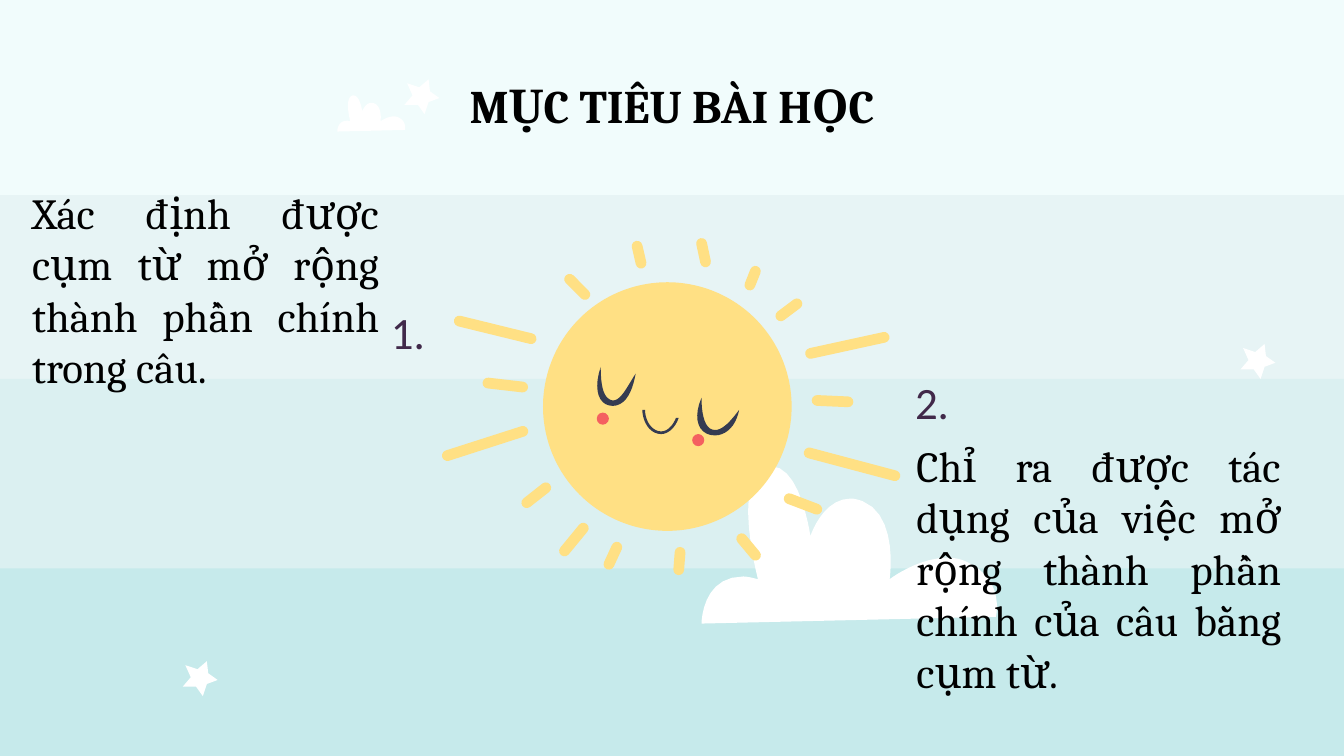
import math

import pptx
import pptx.dml.color
import pptx.enum.shapes
import pptx.enum.text
import pptx.util

RGBColor = pptx.dml.color.RGBColor
SHAPE = pptx.enum.shapes.MSO_SHAPE
ANCHOR = pptx.enum.text.MSO_ANCHOR
ALIGN = pptx.enum.text.PP_ALIGN

PX = 9144  # 100 px to the inch
MIST = RGBColor(0xE7, 0xF4, 0xF5)
PALE = RGBColor(0xF1, 0xFC, 0xFC)
LIGHT = RGBColor(0xDB, 0xF0, 0xF1)
AQUA = RGBColor(0xC6, 0xEA, 0xEB)
WHITE = RGBColor(0xFF, 0xFF, 0xFF)
YELLOW = RGBColor(0xFF, 0xE0, 0x84)
NAVY = RGBColor(0x35, 0x3B, 0x51)
CORAL = RGBColor(0xF4, 0x60, 0x60)
PURPLE = RGBColor(0x41, 0x29, 0x4A)
BLACK = RGBColor(0, 0, 0)

deck = pptx.Presentation()
deck.slide_width = 1000 * PX
deck.slide_height = deck.slide_width * 9 // 16
page = deck.slides.add_slide(deck.slide_layouts[5])
page.background.fill.solid()
page.background.fill.fore_color.rgb = MIST


def paint(shape, color):
    shape.shadow.inherit = False
    shape.fill.solid()
    shape.fill.fore_color.rgb = color
    shape.line.fill.background()


def draw_outline(segments, color, left=0, top=0, scale=1):
    """Fill a closed outline; a segment is a point (2 numbers) or a Bezier curve (6)."""
    points = [segments[0]]
    for segment in segments[1:]:
        if len(segment) == 2:
            points.append(segment)
            continue
        start, controls = points[-1], list(zip(segment[::2], segment[1::2]))
        for step in range(1, 11):
            t = step / 10
            weights = ((1 - t) ** 3, 3 * t * (1 - t) ** 2, 3 * t * t * (1 - t), t ** 3)
            curve = [start] + controls
            points.append(tuple(sum(w * c[axis] for w, c in zip(weights, curve))
                                for axis in (0, 1)))
    corners = [(round((left + x * scale) * PX), round((top + y * scale) * PX))
               for x, y in points]
    builder = page.shapes.build_freeform(*corners[0])
    builder.add_line_segments(corners[1:], close=True)
    paint(builder.convert_to_shape(), color)


# Sky bands
for top, height, color in ((282, 144, LIGHT), (423, 144, AQUA), (-3, 148, PALE)):
    band = page.shapes.add_shape(SHAPE.RECTANGLE, -1 * PX, top * PX, 1007 * PX, height * PX)
    paint(band, color)

# Stars and the large cloud
STAR = [(18, 0), (19, 9), (26, 14), (18, 17), (15, 26),
        (10, 19), (0, 19), (6, 12), (2, 3), (11, 6)]
for left, top in ((136, 492), (923, 256), (301, 59)):
    draw_outline(STAR, WHITE, left, top)

CLOUD = [(52, 0), (51, 0, 49, 0, 48, 1), (22, 9, 42, 84, 42, 84),
         (38, 83, 34, 82, 31, 82), (0, 82, 0, 117, 0, 117), (219, 112),
         (219, 112, 226, 85, 199, 72), (194, 69, 188, 68, 183, 68),
         (161, 68, 140, 84, 140, 84), (140, 84, 147, 37, 120, 26),
         (117, 25, 114, 24, 111, 24), (90, 24, 81, 52, 81, 52),
         (81, 52, 74, 0, 52, 0)]
draw_outline(CLOUD, WHITE, 522, 347)

# Title and the two goals
title = page.shapes.title
title.left, title.top, title.width, title.height = 80 * PX, 47 * PX, 840 * PX, 45 * PX
page.shapes._spTree.append(title._element)  # in front of the sky

texts = [(title, "MỤC TIÊU BÀI HỌC", ANCHOR.TOP, ALIGN.CENTER, "Cambria", 25, BLACK)]
for left, top, width, height, *style in (
    (94, 227, 232, 40, "1.", ANCHOR.MIDDLE, ALIGN.RIGHT, "Calibri", 24, PURPLE),
    (14, 149, 278, 153, "Xác định được cụm từ mở rộng thành phần chính trong câu.",
     ANCHOR.BOTTOM, ALIGN.JUSTIFY, "Cambria", 23, BLACK),
    (671, 279, 232, 40, "2.", ANCHOR.MIDDLE, ALIGN.LEFT, "Calibri", 24, PURPLE),
    (672, 317, 291, 65,
     "Chỉ ra được tác dụng của việc mở rộng thành phần chính của câu bằng cụm từ.",
     ANCHOR.TOP, ALIGN.JUSTIFY, "Cambria", 23, BLACK),
):
    box = page.shapes.add_textbox(left * PX, top * PX, width * PX, height * PX)
    texts.append((box, *style))

for box, text, anchor, align, font, size, color in texts:
    frame = box.text_frame
    frame.text = text
    frame.word_wrap = True
    frame.auto_size = pptx.enum.text.MSO_AUTO_SIZE.NONE
    frame.vertical_anchor = anchor
    frame.margin_left = frame.margin_right = 10 * PX
    frame.margin_top = frame.margin_bottom = 10 * PX
    para = frame.paragraphs[0]
    para.alignment = align
    span = para.runs[0]
    span.font.name = font
    span.font.size = pptx.util.Pt(size)
    span.font.bold = box is title
    span.font.color.rgb = color

draw_outline(CLOUD, WHITE, 251, 71, 0.23)

# Sun: disc, rays, face
disc = page.shapes.add_shape(SHAPE.OVAL, 404 * PX, 210 * PX, 185 * PX, 185 * PX)
paint(disc, YELLOW)

THICK = 8
RAYS = [  # centres of the two round ends
    (581, 235, 593, 226), (603, 263, 658, 251), (608, 298, 631, 299),
    (602, 337, 666, 354), (587, 371, 608, 379), (552, 401, 562, 413),
    (506, 411, 505, 424), (562, 202, 558, 212), (522, 181, 525, 195),
    (474, 183, 477, 196), (424, 208, 435, 219), (342, 239, 395, 252),
    (363, 285, 389, 288), (333, 339, 389, 321), (406, 363, 392, 374),
    (434, 393, 420, 410), (459, 407, 453, 420),
]
for x1, y1, x2, y2 in RAYS:
    length = round(math.hypot(x2 - x1, y2 - y1)) + THICK
    left, top = (x1 + x2 - length) / 2, (y1 + y2 - THICK) / 2
    ray = page.shapes.add_shape(SHAPE.ROUNDED_RECTANGLE, round(left * PX), round(top * PX),
                                length * PX, THICK * PX)
    ray.adjustments[0] = 0.5
    ray.rotation = math.degrees(math.atan2(y2 - y1, x2 - x1))
    paint(ray, YELLOW)

LEFT_EYE = [(447, 273), (441, 291, 446, 302, 456, 302), (466, 302, 471, 290, 473, 278),
            (466, 289, 462, 298, 456, 298), (450, 297, 447, 290, 447, 273)]
RIGHT_EYE = [(522, 296), (515, 312, 520, 324, 532, 324), (541, 324, 548, 316, 550, 305),
             (544, 313, 538, 320, 532, 320), (525, 320, 522, 310, 522, 296)]
SMILE = [(478, 305), (478, 313, 483, 323, 492, 323), (498, 323, 503, 317, 505, 311),
         (503, 311), (501, 316, 497, 321, 492, 321), (485, 321, 480, 313, 480, 305)]
for feature in (LEFT_EYE, RIGHT_EYE, SMILE):
    draw_outline(feature, NAVY)

for left, top in ((515, 323), (444, 307)):
    cheek = page.shapes.add_shape(SHAPE.OVAL, left * PX, top * PX, 9 * PX, 9 * PX)
    paint(cheek, CORAL)

deck.save("out.pptx")
